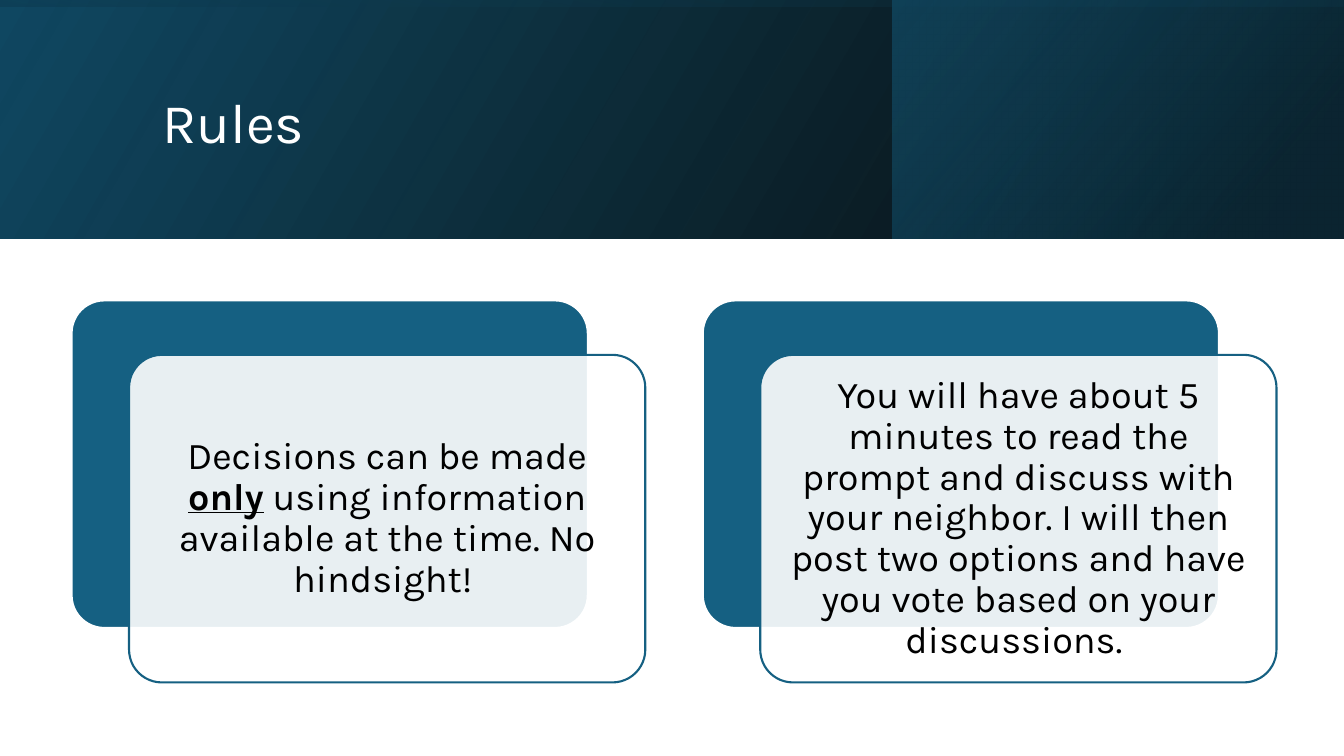
"""Build the Rules slide: a shaded title band over two layered cards."""
import lxml.etree
import pptx
import pptx.dml.color
import pptx.enum.shapes
import pptx.enum.text
import pptx.oxml
import pptx.oxml.ns
import pptx.util

WIDE, HIGH = 13.33, 7.5
FONT = "Karla"
BLUE, WHITE, BLACK = "156082", "FFFFFF", "000000"
TITLE = "Rules"
RULES = [
    [("Decisions can be made ", False), ("only", True),
     (" using information available at the time. No hindsight! ", False)],
    [("You will have about 5 minutes to read the prompt and discuss with "
      "your neighbor. I will then post two options and have you vote based "
      "on your discussions. ", False)],
]

BAND = 0.316 * HIGH
SIDE = 4.48
BANDS = [
    dict(box=(0, 0, WIDE, BAND), angle=330,
         stops=[(0, BLACK, 96), (100, "104862", 100)]),
    dict(box=(WIDE - SIDE, 0, SIDE, BAND), angle=320,
         stops=[(19, "0B3041", 68), (100, BLUE, 48)]),
    dict(box=((WIDE - BAND) / 2, (BAND - WIDE) / 2, BAND, WIDE), angle=350,
         stops=[(23, "104862", 16), (99, BLACK, 45)], turn=270),
]
LEFT, TOP, STEP = 0.71, 2.98, 6.26
CARD = (5.12, 3.25)
SHIFT = (0.57, 0.54)
INSET = 0.1

SHAPE = pptx.enum.shapes.MSO_SHAPE
ALIGN = pptx.enum.text.PP_ALIGN
qn = pptx.oxml.ns.qn


def color(code):
    """Turn a hex string into a color."""
    return pptx.dml.color.RGBColor.from_string(code)


def place(box):
    """Turn inches into slide units."""
    return [pptx.util.Inches(part) for part in box]


def fade(node, share):
    """Set the opacity, in percent, of a color node."""
    alpha = lxml.etree.SubElement(node, qn("a:alpha"))
    alpha.set("val", str(share * 1000))


def write(frame, runs, size, ink, align, inset=0.1, after=0):
    """Fill a text frame with one paragraph of (text, strong) runs."""
    frame.word_wrap = True
    frame.auto_size = pptx.enum.text.MSO_AUTO_SIZE.NONE
    frame.vertical_anchor = pptx.enum.text.MSO_ANCHOR.MIDDLE
    frame.margin_left = frame.margin_right = pptx.util.Inches(inset)
    frame.margin_top = frame.margin_bottom = pptx.util.Inches(inset)
    para = frame.paragraphs[0]
    para.alignment = align
    para.line_spacing = 0.9
    para.space_before = pptx.util.Pt(0)
    para.space_after = pptx.util.Pt(after)
    for text, strong in runs:
        run = para.add_run()
        run.text = text
        run.font.name = FONT
        run.font.size = pptx.util.Pt(size)
        run.font.color.rgb = color(ink)
        run.font.bold = run.font.underline = strong


def shade(shapes, box, angle, stops, turn=0):
    """Draw a mirrored rectangle with a see-through gradient."""
    shape = shapes.add_shape(SHAPE.RECTANGLE, *place(box))
    shape.shadow.inherit = False
    shape.line.fill.background()
    shape.rotation = turn
    props = shape._element.spPr
    props.find(qn("a:xfrm")).set("flipH", "1")
    shape.fill.background()
    grad = pptx.oxml.parse_xml(
        f'<a:gradFill {pptx.oxml.ns.nsdecls("a")} rotWithShape="1">'
        f'<a:gsLst/><a:lin ang="{angle * 60000}" scaled="0"/></a:gradFill>')
    for spot, code, share in stops:
        stop = lxml.etree.SubElement(grad[0], qn("a:gs"))
        stop.set("pos", str(spot * 1000))
        node = lxml.etree.SubElement(stop, qn("a:srgbClr"))
        node.set("val", code)
        fade(node, share)
    props.replace(props.find(qn("a:noFill")), grad)


def panel(shapes, box, fill, line, share=100):
    """Draw one rounded panel of a card."""
    shape = shapes.add_shape(SHAPE.ROUNDED_RECTANGLE, *place(box))
    shape.shadow.inherit = False
    shape.adjustments[0] = 0.1
    shape.fill.solid()
    shape.fill.fore_color.rgb = color(fill)
    shape.line.color.rgb = color(line)
    shape.line.width = pptx.util.Pt(1.5)
    if share < 100:
        fade(shape._element.spPr.find(qn("a:solidFill"))[0], share)


def main():
    """Build and save the slide."""
    deck = pptx.Presentation()
    deck.slide_width, deck.slide_height = place((WIDE, HIGH))
    slide = deck.slides.add_slide(deck.slide_layouts[5])
    shapes = slide.shapes
    for band in BANDS:
        shade(shapes, **band)

    title = shapes.title
    title.left, title.top, title.width, title.height = place(
        (1.51, 0.38, 10.63, 1.72))
    write(title.text_frame, [(TITLE, False)], 40, WHITE, ALIGN.LEFT)
    title._element.getparent().append(title._element)

    wide, high = CARD
    for index, rule in enumerate(RULES):
        group = shapes.add_group_shape().shapes
        left = LEFT + index * STEP
        x, y = left + SHIFT[0], TOP + SHIFT[1]
        panel(group, (left, TOP, wide, high), BLUE, WHITE)
        panel(group, (x, y, wide, high), WHITE, BLUE, share=90)
        note = group.add_textbox(*place(
            (x + INSET, y + INSET, wide - 2 * INSET, high - 2 * INSET)))
        write(note.text_frame, rule, 27, BLACK, ALIGN.CENTER,
              inset=0.11, after=9.45)

    deck.save("out.pptx")


if __name__ == "__main__":
    main()
